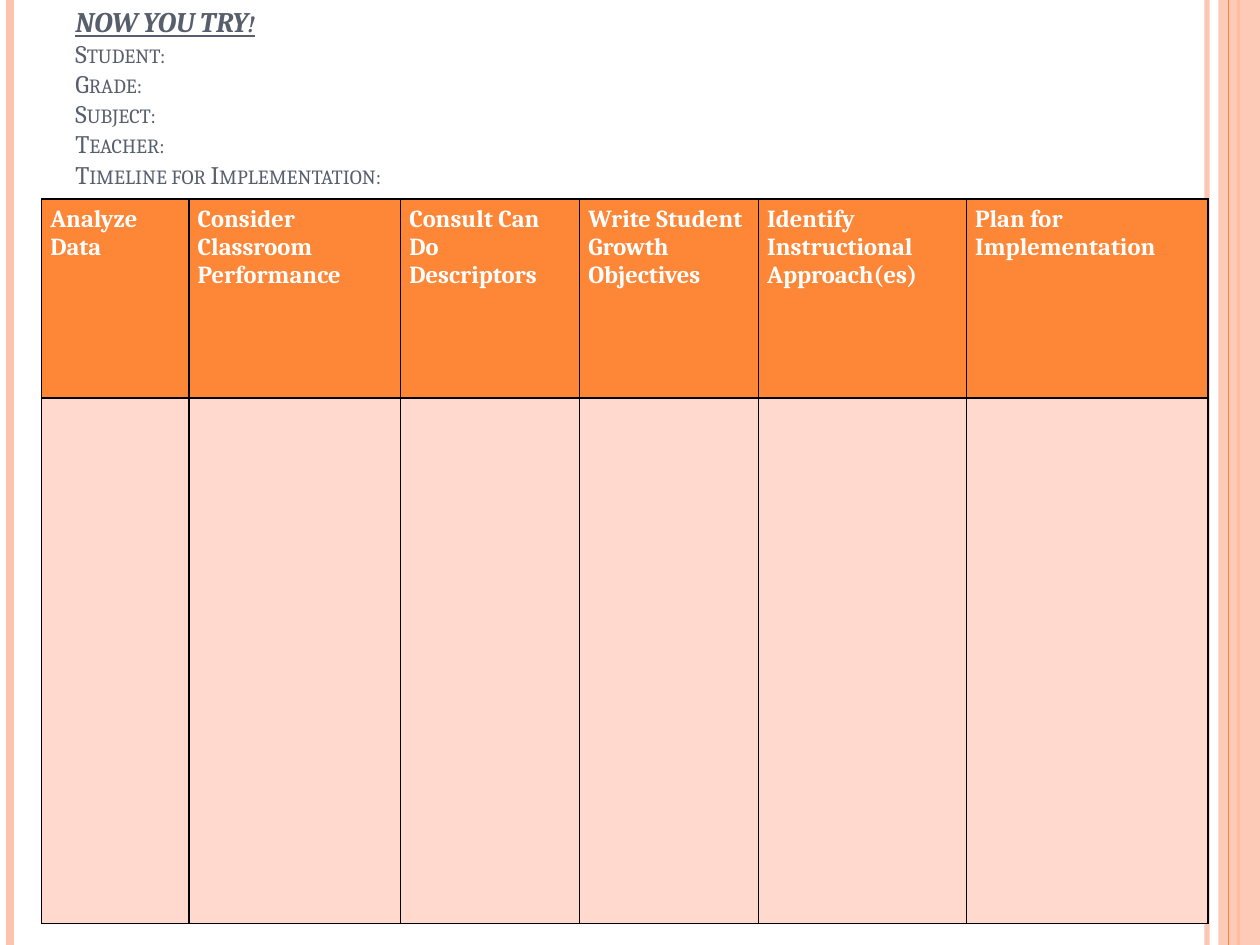
from dataclasses import dataclass

from lxml import etree
from pptx import Presentation, util as u
from pptx.dml.color import RGBColor
from pptx.enum import shapes, text
from pptx.oxml.ns import qn


@dataclass(frozen=True)
class Theme:
    font: str = "Cambria"
    ink: str = "575F6D"
    accent: str = "FE8637"
    soft: str = "FEC3AE"
    body: str = "FFD9CE"
    light: str = "FFFFFF"
    border: str = "000000"
    heading_size: float = 16.2
    field_size: float = 14.4
    table_size: float = 14


THEME = Theme()
WIDTH, HEIGHT = u.Inches(10), u.Inches(7.5)
FIELDS = ["Student:", "Grade:", "Subject:", "Teacher:", "Timeline for Implementation:"]
STEPS = [
    "Analyze Data",
    "Consider Classroom Performance",
    "Consult Can Do Descriptors",
    "Write Student Growth Objectives",
    "Identify Instructional Approach(es)",
    "Plan for Implementation",
]
COLUMNS = [1.17, 1.68, 1.42, 1.42, 1.65, 1.92]
ROWS = [1.58, 4.17]


def set_color(fill, color, opacity=100):
    fill.solid()
    fill.fore_color.rgb = RGBColor.from_string(color)
    if opacity < 100:
        node = fill._xPr.find(qn("a:solidFill"))[0]
        etree.SubElement(node, qn("a:alpha"), val=str(opacity * 1000))


def set_font(para, size, color, bold=False):
    font = para.font
    font.name, font.size, font.bold = THEME.font, u.Pt(size), bold
    font.color.rgb = RGBColor.from_string(color)
    return font


def add_stripe(page, x, color, weight, opacity=100):
    """Draw a vertical line over the full height of the slide."""
    stripe = page.shapes.add_connector(
        shapes.MSO_CONNECTOR.STRAIGHT, u.Inches(x), 0, u.Inches(x), HEIGHT)
    stripe.line.width = u.Pt(weight)
    set_color(stripe.line.fill, color, opacity)
    etree.SubElement(stripe._element.spPr, qn("a:effectLst"))


def add_band(page, x):
    """Fill the slide from x to its right edge."""
    left = u.Inches(x)
    band = page.shapes.add_shape(
        shapes.MSO_SHAPE.RECTANGLE, left, 0, WIDTH - left, HEIGHT)
    band.shadow.inherit = False
    band.line.fill.background()
    set_color(band.fill, THEME.soft, 87)


def add_heading(page):
    box = page.shapes.add_textbox(
        u.Inches(0.5), u.Inches(0.3), u.Inches(8.17), u.Inches(1.25))
    frame = box.text_frame
    frame.word_wrap = True
    frame.vertical_anchor = text.MSO_ANCHOR.BOTTOM
    frame.text = "\n".join(["NOW YOU TRY!", *FIELDS])
    for index, para in enumerate(frame.paragraphs):
        is_title = index == 0
        size = THEME.heading_size if is_title else THEME.field_size
        font = set_font(para, size, THEME.ink, bold=is_title)
        font.italic = font.underline = is_title
        font._rPr.set("cap", "small")


def add_borders(cell):
    properties = cell._tc.get_or_add_tcPr()
    for index, side in enumerate(("lnL", "lnR", "lnT", "lnB")):
        edge = etree.Element(qn(f"a:{side}"), w=str(u.Pt(1)))
        paint = etree.SubElement(edge, qn("a:solidFill"))
        etree.SubElement(paint, qn("a:srgbClr"), val=THEME.border)
        properties.insert(index, edge)


def add_plan_table(page):
    table = page.shapes.add_table(
        len(ROWS), len(COLUMNS), u.Inches(0.33), u.Inches(1.58),
        u.Inches(sum(COLUMNS)), u.Inches(sum(ROWS))).table
    for column, width in zip(table.columns, COLUMNS):
        column.width = u.Inches(width)
    for row, height in zip(table.rows, ROWS):
        row.height = u.Inches(height)
    for cell in table.iter_cells():
        cell.margin_left = cell.margin_right = u.Inches(0.07)
        cell.margin_top = cell.margin_bottom = u.Inches(0.05)
        set_color(cell.fill, THEME.body)
        add_borders(cell)
    for cell, step in zip(table.rows[0].cells, STEPS):
        cell.text = step
        set_color(cell.fill, THEME.accent)
        set_font(cell.text_frame.paragraphs[0], THEME.table_size, THEME.light, bold=True)


def main():
    deck = Presentation()
    deck.slide_width, deck.slide_height = WIDTH, HEIGHT
    page = deck.slides.add_slide(deck.slide_layouts[6])
    add_stripe(page, 9.58, THEME.soft, 3, opacity=93)
    add_stripe(page, 0.08, THEME.soft, 4.5)
    add_stripe(page, 9.83, THEME.accent, 1.5)
    add_band(page, 9.67)
    add_stripe(page, 9.75, THEME.accent, 0.75)
    add_heading(page)
    add_plan_table(page)
    deck.save("out.pptx")


if __name__ == "__main__":
    main()
